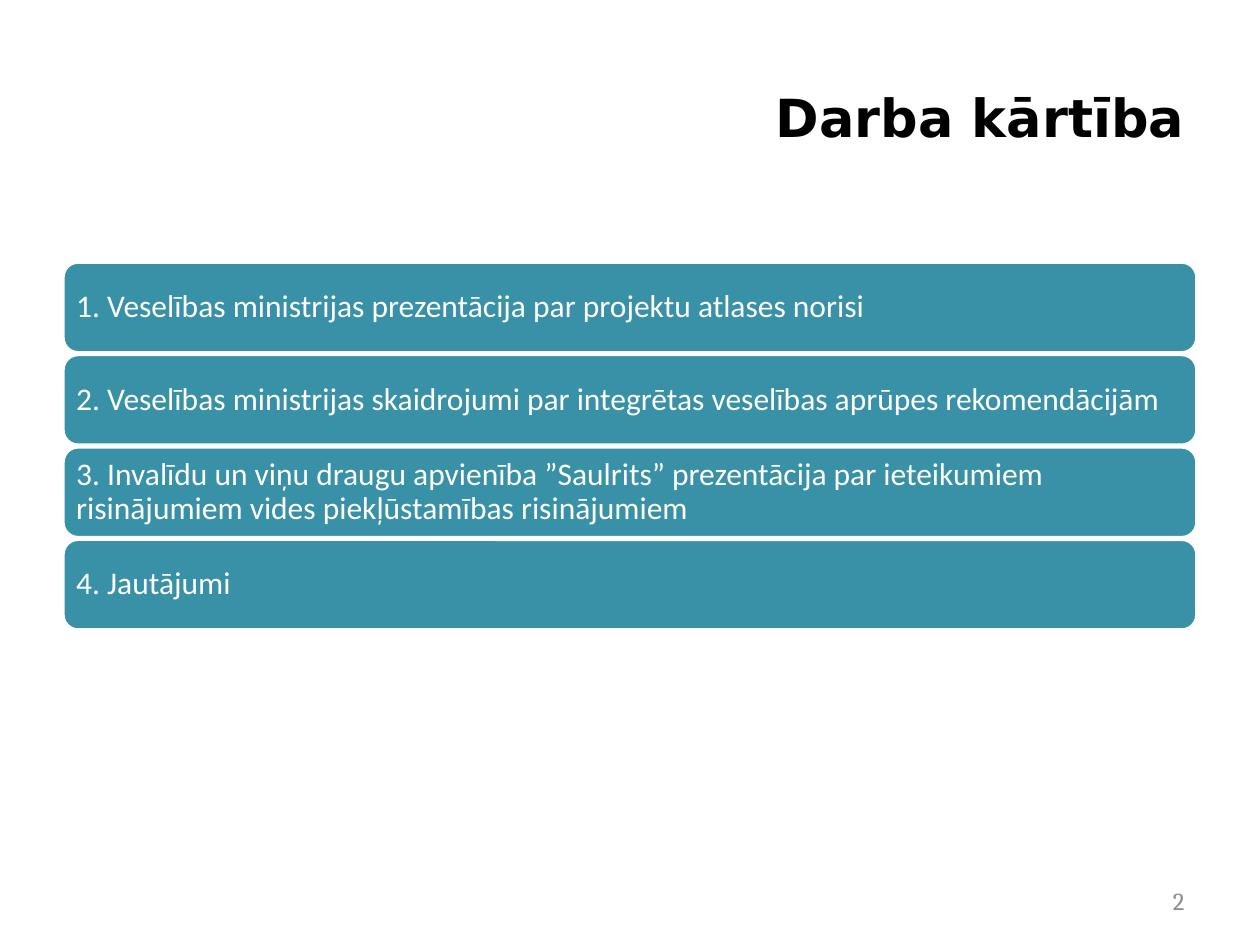
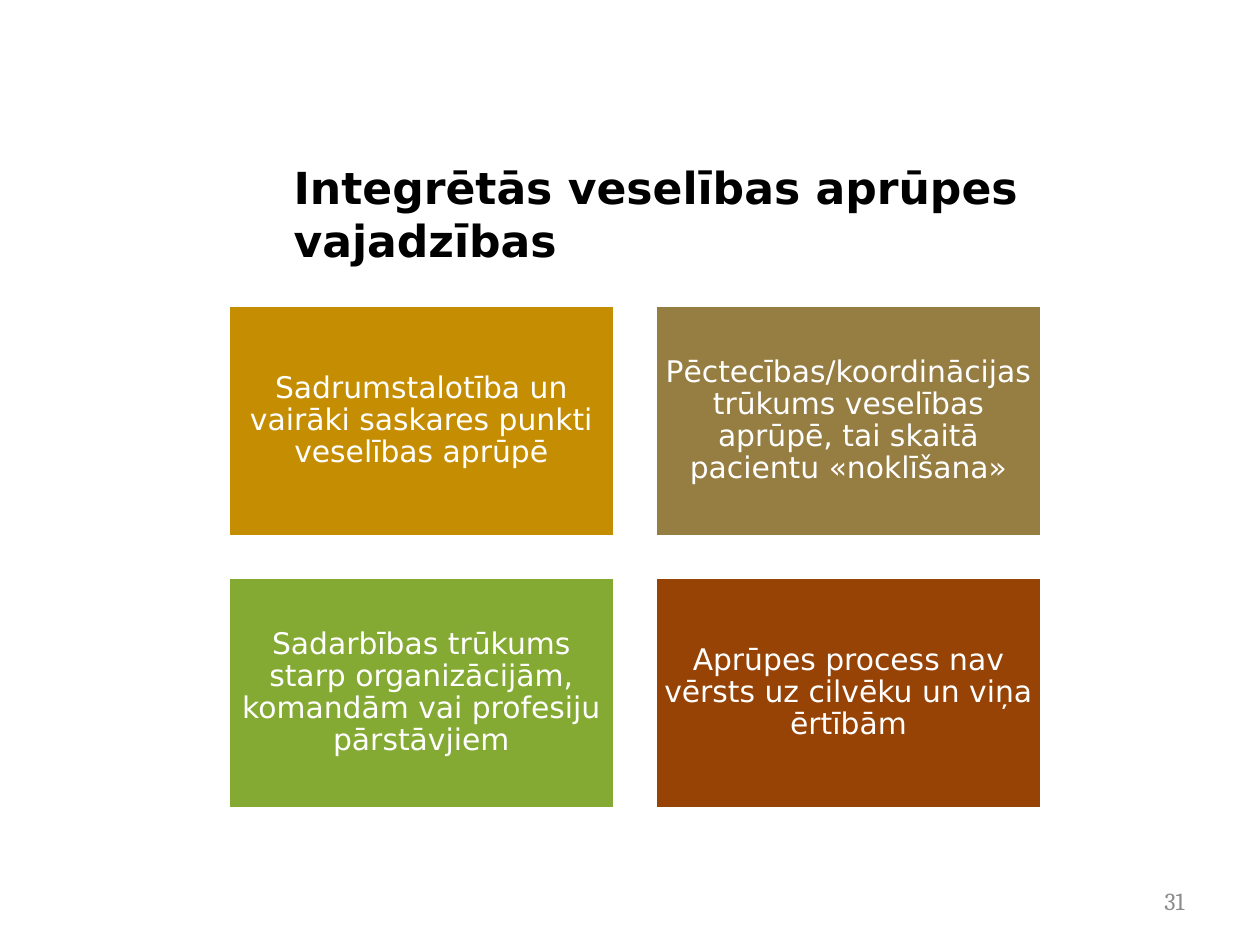
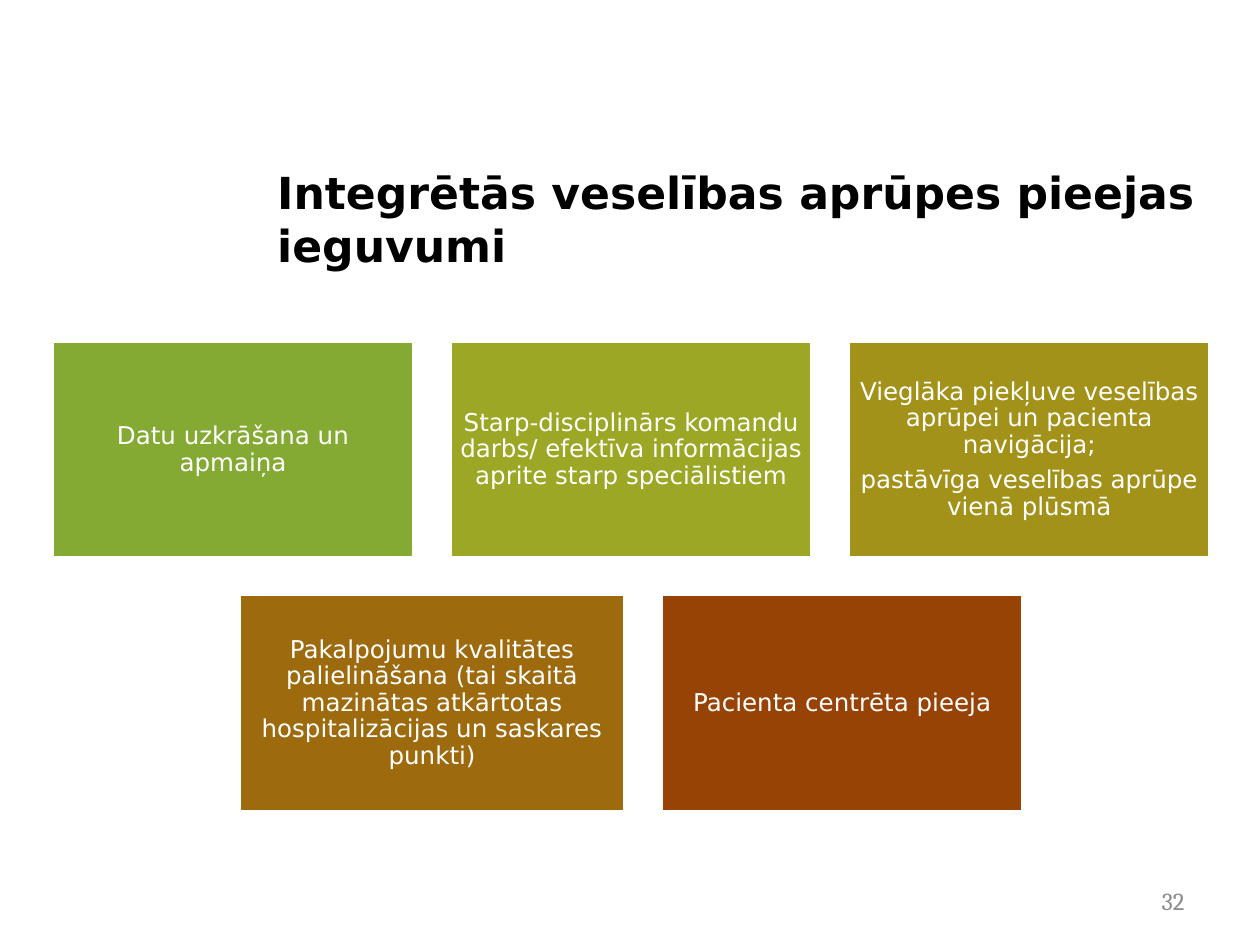
from pptx import Presentation
from pptx.dml.color import RGBColor
from pptx.enum.shapes import MSO_SHAPE
from pptx.enum.text import MSO_ANCHOR, MSO_AUTO_SIZE, PP_ALIGN
from pptx.util import Inches, Pt

COLORS = {
    "black": "000000", "white": "FFFFFF", "gray": "8C8C8C", "teal": "3891A7",
    "gold": "C58D01", "khaki": "967D42", "green": "84AA33", "rust": "964305",
    "lime": "9BA725", "olive": "A39219", "brown": "9D6B0E",
}
TITLE_FONT = "DejaVu Sans"

deck = Presentation()
deck.slide_width, deck.slide_height = Inches(10), Inches(7.5)


def write(shape, text, font, size, color, align, bold=False, inset=None):
    """Fill a shape with wrapped, vertically centred text."""
    frame = shape.text_frame
    frame.text = text
    frame.word_wrap = True
    frame.auto_size = MSO_AUTO_SIZE.NONE
    frame.vertical_anchor = MSO_ANCHOR.MIDDLE
    if inset is not None:
        frame.margin_left = frame.margin_right = Inches(inset)
        frame.margin_top = frame.margin_bottom = Inches(inset)
    for para in frame.paragraphs:
        para.alignment = align
        for span in para.runs:
            span.font.name, span.font.size, span.font.bold = font, Pt(size), bold
            span.font.color.rgb = RGBColor.from_string(COLORS[color])


def add_card(page, kind, area, color, text, font, size, align, inset):
    """Add a filled card with a white outline."""
    card = page.shapes.add_shape(kind, *map(Inches, area))
    card.shadow.inherit = False
    card.fill.solid()
    card.fill.fore_color.rgb = RGBColor.from_string(COLORS[color])
    card.line.color.rgb = RGBColor.from_string(COLORS["white"])
    card.line.width = Pt(2)
    write(card, text, font, size, "white", align, inset=inset)
    paras = card.text_frame.paragraphs
    for para in paras:
        para.line_spacing = 0.9
    for para in paras[:-1]:
        para.space_after = Pt(size * 0.35)


# Titles and slide numbers
headings = [
    ("Darba kārtība", (2, 0.3, 7.5, 1.25), 30, PP_ALIGN.RIGHT, "2"),
    ("Integrētās veselības aprūpes\vvajadzības", (2.23, 1.22, 7.5, 0.94), 25.2, PP_ALIGN.LEFT, "31"),
    ("Integrētās veselības aprūpes pieejas ieguvumi", (2.1, 1.26, 7.5, 0.94), 25.2, PP_ALIGN.LEFT, "32"),
]
pages = []
for heading, area, size, align, number in headings:
    page = deck.slides.add_slide(deck.slide_layouts[5])
    title = page.shapes.title
    title.left, title.top, title.width, title.height = map(Inches, area)
    write(title, heading, TITLE_FONT, size, "black", align, bold=True)
    number_box = page.shapes.add_textbox(Inches(7.17), Inches(6.95), Inches(2.33), Inches(0.4))
    write(number_box, number, "Cambria", 14, "gray", PP_ALIGN.RIGHT)
    pages.append(page)
agenda_page, needs_page, benefits_page = pages

# Agenda: four bars at an equal pitch
agenda = [
    "1. Veselības ministrijas prezentācija par projektu atlases norisi",
    "2. Veselības ministrijas skaidrojumi par integrētas veselības aprūpes rekomendācijām",
    "3. Invalīdu un viņu draugu apvienība ”Saulrits” prezentācija par ieteikumiem "
    "risinājumiem vides piekļūstamības risinājumiem",
    "4. Jautājumi",
]
bar_pitch = 2.2 / 3
for row, item in enumerate(agenda):
    add_card(agenda_page, MSO_SHAPE.ROUNDED_RECTANGLE, (0.5, 2.08 + row * bar_pitch, 9, 0.72),
             "teal", item, "Calibri", 18, PP_ALIGN.LEFT, 0.07)

# Needs and benefits: rows of (width, colour, text) centred on an axis
needs = [
    [(3.07, "gold", "Sadrumstalotība un vairāki saskares punkti veselības aprūpē"),
     (3.07, "khaki", "Pēctecības/koordinācijas trūkums veselības aprūpē, tai skaitā pacientu «noklīšana»")],
    [(3.07, "green", "Sadarbības trūkums starp organizācijām, komandām vai profesiju pārstāvjiem"),
     (3.07, "rust", "Aprūpes process nav vērsts uz cilvēku un viņa ērtībām")],
]
benefits = [
    [(2.87, "green", "Datu uzkrāšana un apmaiņa"),
     (2.87, "lime", "Starp-disciplinārs komandu darbs/ efektīva informācijas aprite starp speciālistiem"),
     (2.87, "olive", "Vieglāka piekļuve veselības aprūpei un pacienta navigācija;\n"
                     "pastāvīga veselības aprūpe vienā plūsmā")],
    [(3.06, "brown", "Pakalpojumu kvalitātes palielināšana (tai skaitā mazinātas atkārtotas "
                     "hospitalizācijas un saskares punkti)"),
     (2.87, "rust", "Pacienta centrēta pieeja")],
]
# page, rows, axis, top, card height, gap, text size, inset
grids = [
    (needs_page, needs, 5.04, 2.42, 1.84, 0.32, 17, 0.07),
    (benefits_page, benefits, 5.01, 2.71, 1.72, 0.29, 14, 0.06),
]
for page, rows, axis, top, height, gap, size, inset in grids:
    for cards in rows:
        row_width = sum(width for width, _, _ in cards) + gap * (len(cards) - 1)
        left = axis - row_width / 2
        for width, color, text in cards:
            add_card(page, MSO_SHAPE.RECTANGLE, (left, top, width, height),
                     color, text, TITLE_FONT, size, PP_ALIGN.CENTER, inset)
            left += width + gap
        top += height + gap

deck.save("out.pptx")
